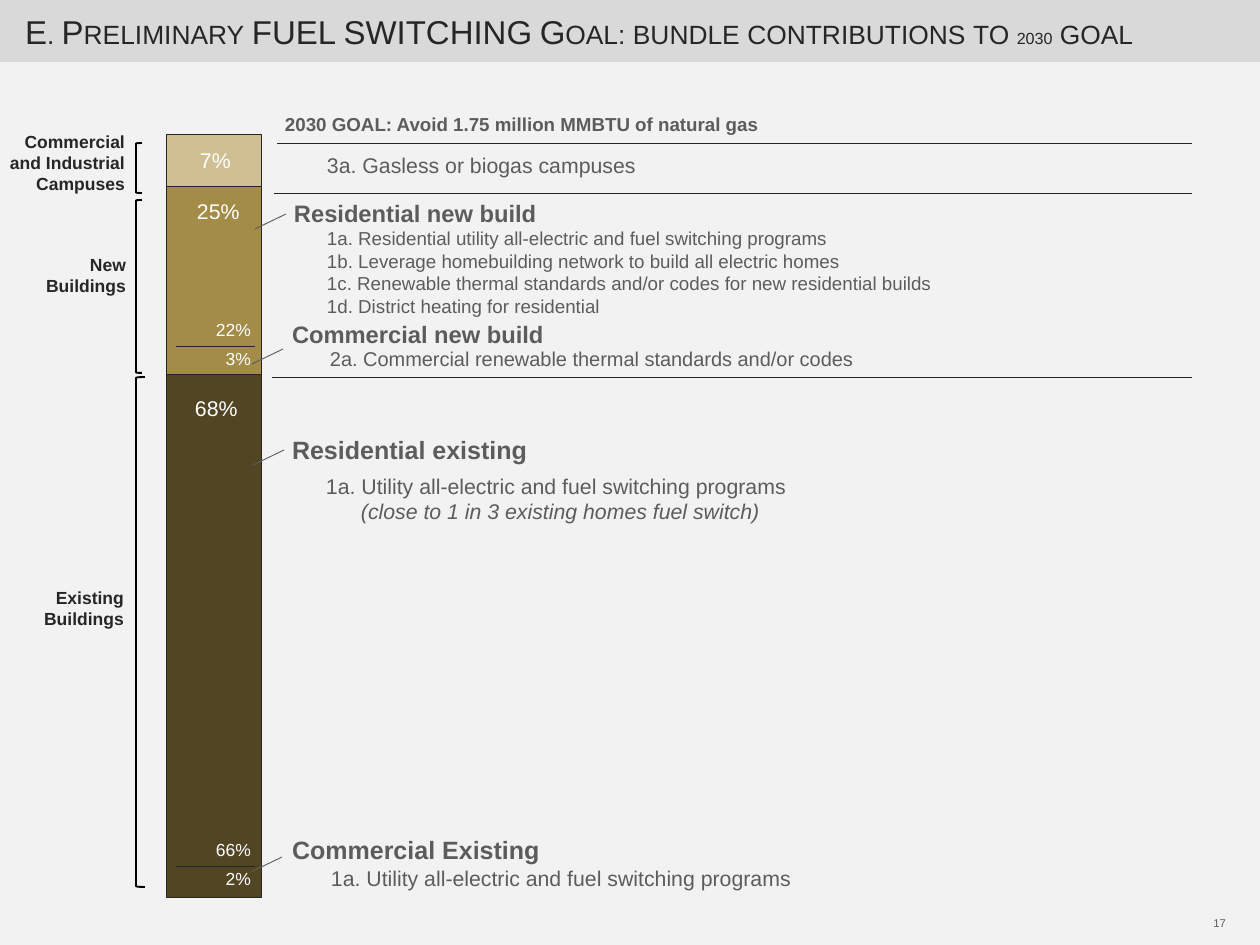
from lxml import etree
from pptx import Presentation
from pptx.chart.data import CategoryChartData
from pptx.dml.color import RGBColor
from pptx.enum.chart import XL_CHART_TYPE as CT
from pptx.enum.shapes import MSO_CONNECTOR as CONN, MSO_SHAPE as SHAPE
from pptx.enum.text import MSO_ANCHOR as ANCHOR, PP_ALIGN as ALIGN
from pptx.oxml.ns import qn
from pptx.util import Pt

PX = 10160
INK = RGBColor(0x26, 0x26, 0x26)
GREY = RGBColor(0x5C, 0x5C, 0x5C)
BLACK = RGBColor(0, 0, 0)
WHITE = RGBColor(0xFF, 0xFF, 0xFF)
PAPER = RGBColor(0xF2, 0xF2, 0xF2)
BAND = RGBColor(0xD9, 0xD9, 0xD9)
BROWN = RGBColor(0x52, 0x45, 0x24)
GOLD = RGBColor(0xA3, 0x8B, 0x48)
SAND = RGBColor(0xCF, 0xBF, 0x92)


def px(*values):
    """Turn pixel lengths into EMU."""
    return [round(v * PX) for v in values]


def set_font(font, size, color, **fmt):
    """Apply the font format values."""
    fmt = {"name": "Arial", "size": Pt(size), **fmt}
    for key, value in fmt.items():
        setattr(font, key, value)
    font.color.rgb = color


def add_text(s, box, lines, size, color, align=ALIGN.LEFT, anchor=ANCHOR.TOP, **fmt):
    """Add a text box with one paragraph per line and return its frame."""
    tf = s.shapes.add_textbox(*px(*box)).text_frame
    side, top = px(13, 6)
    frame = {"word_wrap": True, "vertical_anchor": anchor, "margin_left": side,
             "margin_right": side, "margin_top": top, "margin_bottom": top}
    for key, value in frame.items():
        setattr(tf, key, value)
    for i, line in enumerate(lines):
        p = tf.paragraphs[0] if i == 0 else tf.add_paragraph()
        p.alignment = align
        r = p.add_run()
        r.text = line
        set_font(r.font, size, color, **fmt)
    return tf


def add_line(s, x1, y1, x2, y2, color=INK):
    """Add a thin straight line."""
    sp = s.shapes.add_connector(CONN.STRAIGHT, *px(x1, y1, x2, y2))
    sp.line.color.rgb = color
    sp.line.width = Pt(0.75)
    etree.SubElement(sp._element.spPr, qn("a:effectLst"))


def add_header(s, x, y, w, h):
    """Add the title band and its small-caps title."""
    sp = s.shapes.add_shape(SHAPE.RECTANGLE, *px(x, y, w, h))
    sp.shadow.inherit = False
    sp.fill.solid()
    sp.fill.fore_color.rgb = BAND
    sp.line.color.rgb = BAND
    sp.line.width = Pt(0.75)
    tf = add_text(s, (x + 12, y, w - 30, h), [], 26.4, INK, anchor=ANCHOR.MIDDLE)
    tf.vertical_anchor = ANCHOR.MIDDLE
    parts = [("E. Preliminary FUEL SWITCHING Goal: bundle contributions to ", 26.4),
             ("2030", 16.1), (" goal", 26.4)]
    for text, size in parts:
        r = tf.paragraphs[0].add_run()
        r.text = text
        set_font(r.font, size, INK)
        r._r.get_or_add_rPr().set("cap", "small")


def add_bar(s, x, y, w, h):
    """Add the stacked column, its shares and its split lines."""
    data = CategoryChartData()
    data.categories = ["1"]
    series = [("Series 1", 100, BROWN), ("Series 2", 36, GOLD), ("Series 3", 10, SAND)]
    for name, value, _ in series:
        data.add_series(name, [value])
    chart = s.shapes.add_chart(CT.COLUMN_STACKED, *px(x, y, w, h), data).chart
    chart.has_legend = chart.has_title = False
    set_font(chart.font, 10, INK, name="DejaVu Sans")
    axis = chart.value_axis
    axis.minimum_scale, axis.maximum_scale = 0, 146
    axis.has_major_gridlines = False
    axis.tick_labels.number_format = "0.0%"
    axis.tick_labels.number_format_is_linked = False
    axis.visible = chart.category_axis.visible = False
    plot = chart.plots[0]
    plot.gap_width, plot.overlap, plot.vary_by_categories = 150, 100, False
    for ser, (_, _, color) in zip(plot.series, series):
        ser.format.fill.solid()
        ser.format.fill.fore_color.rgb = color
        ser.format.line.color.rgb = INK
        ser.format.line.width = Pt(0.75)

    area = chart._chartSpace.chart.plotArea
    for old in area.findall(qn("c:layout")):
        area.remove(old)
    layout = etree.Element(qn("c:layout"))
    area.insert(0, layout)
    manual = etree.SubElement(layout, qn("c:manualLayout"))
    values = {"layoutTarget": "inner", "xMode": "edge", "yMode": "edge",
              "x": 0.015, "y": 0.019, "w": 0.97, "h": 0.961}
    for key, value in values.items():
        etree.SubElement(manual, qn(f"c:{key}")).set("val", str(value))

    for text, left, top in [("7%", 95, 22), ("25%", 92, 73), ("68%", 90, 270)]:
        add_text(s, (x + left, y + top, 80, 38), [text], 17, WHITE)
    for upper, lower, split in [("22%", "3%", 227), ("66%", "2%", 747)]:
        add_line(s, x + 84, y + split, x + 163, y + split)
        for text, top in [(upper, split - 33), (lower, split - 4)]:
            add_text(s, (x + 92, y + top, 80, 34), [text], 14, WHITE, ALIGN.RIGHT)


def add_sectors(s, x, y, w):
    """Add the sector names and the brackets that span their shares."""
    sectors = [(["Commercial and Industrial Campuses"], 1, 0, 76, 18, 50, 6),
               (["New", "Buildings"], 2, 123, 55, 75, 173, 6),
               (["Existing Buildings"], 0, 456, 55, 252, 510, 9)]
    for lines, dx, top, height, start, span, depth in sectors:
        add_text(s, (x + dx, y + top, w, height), lines, 14, INK, ALIGN.RIGHT, bold=True)
        sp = s.shapes.add_shape(SHAPE.LEFT_BRACKET, *px(x + w - 1, y + start, depth, span))
        sp.shadow.inherit = False
        sp.fill.background()
        sp.line.color.rgb = BLACK
        sp.line.width = Pt(1.5)


def add_bundles(s, x, y, w):
    """Add the goal, the dividing rules and the bundles with their measures."""
    add_text(s, (x, y, w, 36), ["2030 GOAL: Avoid 1.75 million MMBTU of natural gas"],
             15, GREY, bold=True)
    for left, top in [(5, 36), (2, 86), (0, 270)]:
        add_line(s, x + left, y + top, x + w, y + top)
    headings = [("Residential new build", 9, 86, 19, -17, 122),
                ("Commercial new build", 7, 207, 19, -20, 257),
                ("Residential existing", 7, 321, 20, -19, 358),
                ("Commercial Existing", 7, 722, 20, -21, 765)]
    for text, left, top, size, cx, cy in headings:
        add_text(s, (x + left, y + top, 330, 42), [text], size, GREY, bold=True)
        add_line(s, x + cx, y + cy, x + cx + 31, y + cy - 15, GREY)
    utility = "1a. Utility all-electric and fuel switching programs"
    measures = [
        (42, 39, 17, ["3a. Gasless or biogas campuses"]),
        (42, 114, 15, ["1a. Residential utility all-electric and fuel switching programs",
                       "1b. Leverage homebuilding network to build all electric homes",
                       "1c. Renewable thermal standards and/or codes for new residential builds",
                       "1d. District heating for residential"]),
        (45, 234, 16, ["2a. Commercial renewable thermal standards and/or codes"]),
        (41, 360, 17, [utility, "(close to 1 in 3 existing homes fuel switch)"]),
        (46, 752, 17, [utility])]
    for left, top, size, lines in measures:
        tf = add_text(s, (x + left, y + top, 774, 14 + 24 * len(lines)), lines, size, GREY)
        for p in tf.paragraphs:
            if p.text.startswith("("):
                p._p.get_or_add_pPr().set("marL", str(35 * PX))
                p.runs[0].font.italic = True


def add_page_number(s, x, y, w, h):
    """Add the page number."""
    add_text(s, (x, y, w, h), ["17"], 9, GREY, ALIGN.RIGHT)


def main():
    """Build and save the slide."""
    prs = Presentation()
    prs.slide_width, prs.slide_height = px(1260, 945)
    s = prs.slides.add_slide(prs.slide_layouts[6])
    s.background.fill.solid()
    s.background.fill.fore_color.rgb = PAPER
    add_header(s, 0, 0, 1260, 62)
    add_bar(s, 92, 119, 245, 794)
    add_sectors(s, -23, 125, 160)
    add_bundles(s, 272, 107, 920)
    add_page_number(s, 1175, 910, 64, 33)
    prs.save("out.pptx")


if __name__ == "__main__":
    main()
